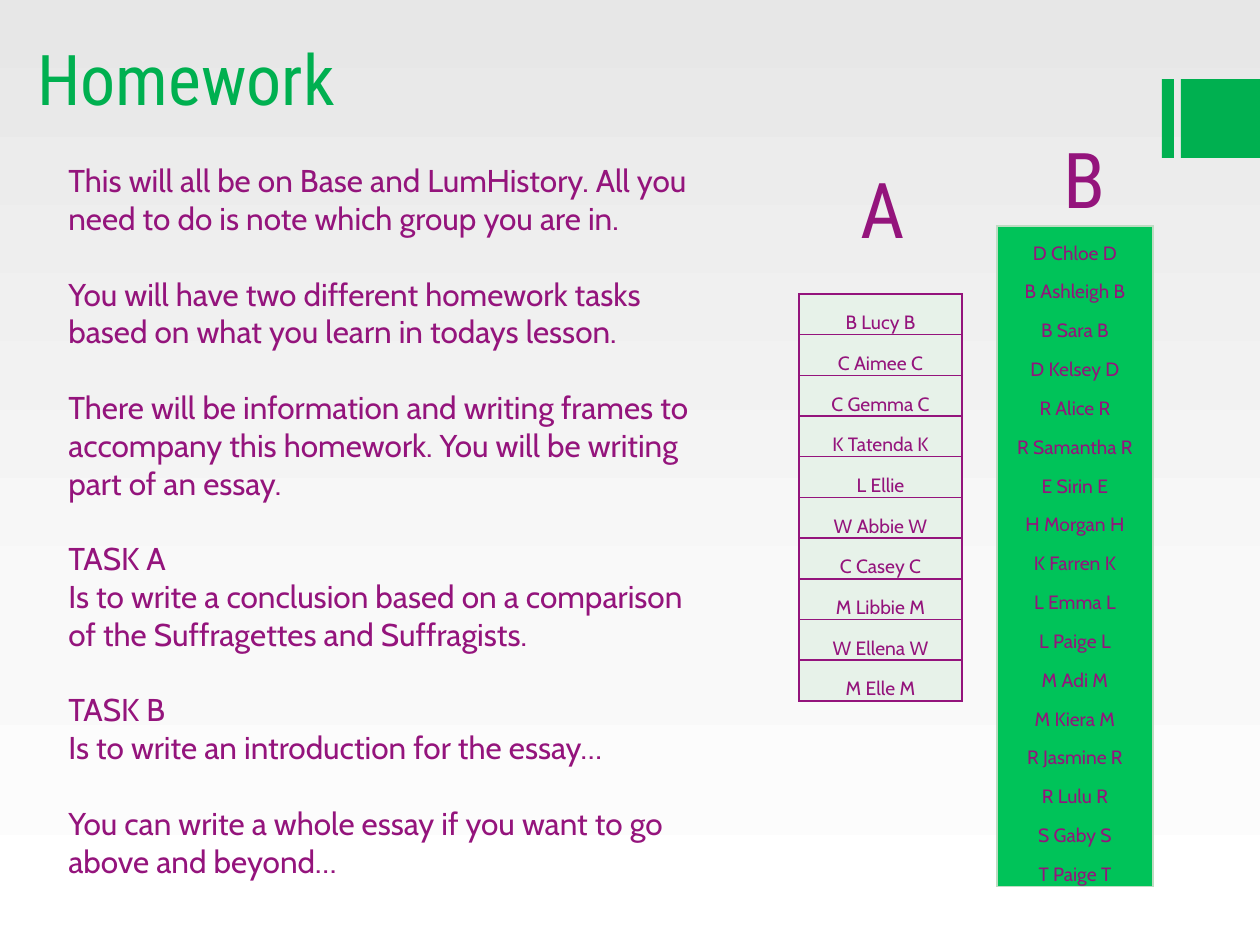
"""Build the homework slide with its two group lists."""
import copy
from dataclasses import dataclass

import pptx
import pptx.dml.color
import pptx.enum.shapes
import pptx.enum.text
import pptx.oxml
import pptx.oxml.ns
import pptx.util

ALIGN = pptx.enum.text.PP_ALIGN
ANCHOR = pptx.enum.text.MSO_ANCHOR


@dataclass(frozen=True)
class Theme:
    green: str = "00B050"
    purple: str = "94147C"
    pale: str = "E7F2E9"
    bright: str = "00C359"
    edge: str = "BDDCC2"
    backdrop: tuple = ((0, "E7E7E7"), (0.65, "F9F9F9"), (1, "FFFFFF"))
    heading_font: str = "Roboto Condensed"
    body_font: str = "Cabin"
    title_size: int = 40
    letter_size: int = 44
    body_size: int = 18
    name_size: int = 11
    line_gap: float = 21.6


@dataclass(frozen=True)
class Box:
    x: int
    y: int
    w: int
    h: int

    def emu(self) -> tuple:
        return tuple(px(n) for n in (self.x, self.y, self.w, self.h))


@dataclass(frozen=True)
class Style:
    font: str
    size: int
    color: str


@dataclass(frozen=True)
class Group:
    letter: str
    letter_box: Box
    table_box: Box
    fill: str
    border: str
    ruled: bool
    names: tuple


THEME = Theme()
TITLE = Style(THEME.heading_font, THEME.title_size, THEME.green)
LETTER = Style(THEME.heading_font, THEME.letter_size, THEME.purple)
BODY = Style(THEME.body_font, THEME.body_size, THEME.purple)
NAME = Style(THEME.body_font, THEME.name_size, THEME.purple)

BARS = (Box(1162, 79, 12, 79), Box(1181, 79, 79, 79))
SECTIONS = (
    ("This will all be on Base and LumHistory. All you need to do is note which group you are in.",),
    ("You will have two different homework tasks based on what you learn in todays lesson.",),
    ("There will be information and writing frames to accompany this homework. "
     "You will be writing part of an essay.",),
    ("TASK A",
     "Is to write a conclusion based on a comparison of the Suffragettes and Suffragists."),
    ("TASK B", "Is to write an introduction for the essay…"),
    ("You can write a whole essay if you want to go above and beyond…",),
)
GROUPS = (
    Group("A", Box(848, 155, 64, 106), Box(799, 294, 163, 407),
          THEME.pale, THEME.purple, True,
          ("B Lucy B", "C Aimee C", "C Gemma C", "K Tatenda K", "L Ellie",
           "W Abbie W", "C Casey C", "M Libbie M", "W Ellena W", "M Elle M")),
    Group("B", Box(1051, 125, 64, 106), Box(997, 226, 156, 661),
          THEME.bright, THEME.edge, False,
          ("D Chloe D", "B Ashleigh B", "B Sara B", "D Kelsey D", "R Alice R",
           "R Samantha R", "E Sirin E", "H Morgan H", "K Farren K", "L Emma L",
           "L Paige L", "M Adi M", "M Kiera M", "R Jasmine R", "R Lulu R",
           "S Gaby S", "T Paige T")),
)


def px(n: float) -> int:
    return round(n * pptx.util.Inches(1) / 126)


def rgb(color: str):
    return pptx.dml.color.RGBColor.from_string(color)


def apply(target, formats: dict) -> None:
    for name, value in formats.items():
        setattr(target, name, value)


def write(p, text: str, style: Style) -> None:
    r = p.add_run()
    r.text = text
    apply(r.font, {"name": style.font, "size": pptx.util.Pt(style.size), "bold": False})
    r.font.color.rgb = rgb(style.color)


def paint_background(s) -> None:
    fill = s.background.fill
    fill.gradient()
    fill.gradient_angle = 270
    stops = s.element.xpath(".//p:bg//a:gsLst")[0]
    stops.append(copy.deepcopy(stops[-1]))
    for stop, (position, color) in zip(fill.gradient_stops, THEME.backdrop):
        stop.color.rgb = rgb(color)
        stop.position = position


def draw_bar(s, box: Box) -> None:
    sp = s.shapes.add_shape(pptx.enum.shapes.MSO_SHAPE.RECTANGLE, *box.emu())
    sp.shadow.inherit = False
    sp.fill.solid()
    sp.fill.fore_color.rgb = rgb(THEME.green)
    sp.line.fill.background()


def draw_title(s, box: Box, text: str) -> None:
    sp = s.shapes.title
    apply(sp, dict(zip(("left", "top", "width", "height"), box.emu())))
    tf = sp.text_frame
    apply(tf, {"vertical_anchor": ANCHOR.BOTTOM, "word_wrap": True,
               "auto_size": pptx.enum.text.MSO_AUTO_SIZE.NONE})
    tf.paragraphs[0].alignment = ALIGN.LEFT
    write(tf.paragraphs[0], text, TITLE)


def draw_text(s, box: Box, sections: tuple, style: Style) -> None:
    tf = s.shapes.add_textbox(*box.emu()).text_frame
    tf.word_wrap = True
    p = tf.paragraphs[0]
    for i, section in enumerate(sections):
        for j, text in enumerate(section):
            if i or j:
                p = tf.add_paragraph()
            if i and not j:
                p.space_before = pptx.util.Pt(THEME.line_gap)
            write(p, text, style)


def set_borders(cell, color: str, sides: str) -> None:
    tc_pr = cell._tc.get_or_add_tcPr()
    for i, side in enumerate("LRTB"):
        paint = (f'<a:solidFill><a:srgbClr val="{color}"/></a:solidFill>'
                 if side in sides else "<a:noFill/>")
        tc_pr.insert(i, pptx.oxml.parse_xml(
            f'<a:ln{side} {pptx.oxml.ns.nsdecls("a")} w="{pptx.util.Pt(1)}">{paint}</a:ln{side}>'))


def draw_group(s, group: Group) -> None:
    count = len(group.names)
    table = s.shapes.add_table(count, 1, *group.table_box.emu()).table
    apply(table, {"first_row": False, "horz_banding": False})
    for i, name in enumerate(group.names):
        table.rows[i].height = px(group.table_box.h / count)
        cell = table.cell(i, 0)
        apply(cell, {"margin_left": px(1), "margin_right": px(1), "margin_top": px(1),
                     "margin_bottom": 0, "vertical_anchor": ANCHOR.BOTTOM})
        cell.fill.solid()
        cell.fill.fore_color.rgb = rgb(group.fill)
        top = "T" if group.ruled or i == 0 else ""
        bottom = "B" if group.ruled or i == count - 1 else ""
        set_borders(cell, group.border, "LR" + top + bottom)
        p = cell.text_frame.paragraphs[0]
        p.alignment = ALIGN.CENTER
        write(p, name, NAME)
    draw_text(s, group.letter_box, ((group.letter,),), LETTER)


def main() -> None:
    prs = pptx.Presentation()
    apply(prs, {"slide_width": px(1260), "slide_height": px(945)})
    s = prs.slides.add_slide(prs.slide_layouts[5])
    paint_background(s)
    for box in BARS:
        draw_bar(s, box)
    draw_title(s, Box(25, 26, 1008, 100), "Homework")
    draw_text(s, Box(56, 155, 665, 738), SECTIONS, BODY)
    for group in GROUPS:
        draw_group(s, group)
    prs.save("out.pptx")


if __name__ == "__main__":
    main()
